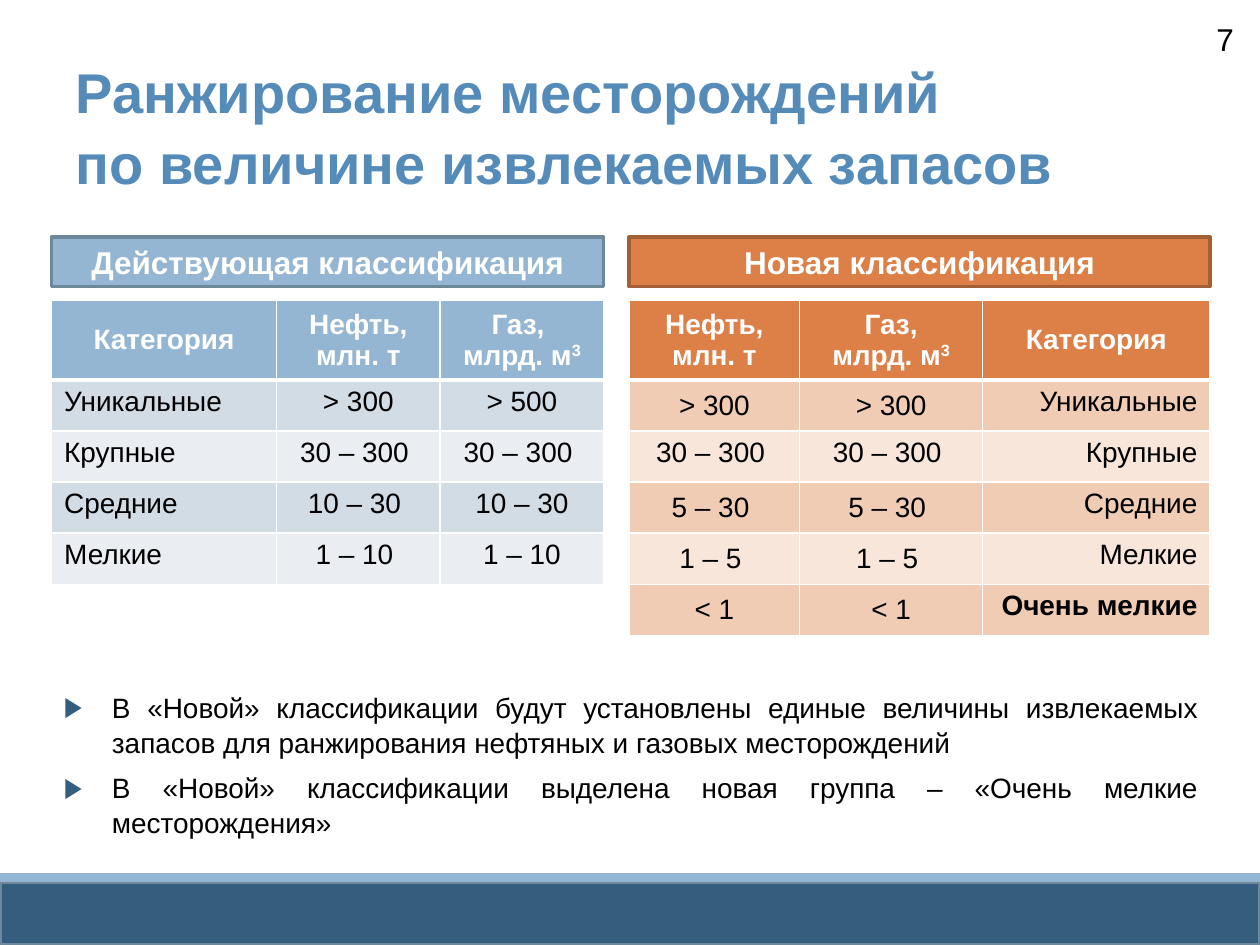
from dataclasses import dataclass

from lxml import etree
from pptx import Presentation
from pptx.dml.color import RGBColor
from pptx.enum import shapes, text
from pptx.oxml import ns
from pptx.util import Pt

LEFT, CENTER, RIGHT, JUSTIFY = (
    text.PP_ALIGN.LEFT, text.PP_ALIGN.CENTER, text.PP_ALIGN.RIGHT, text.PP_ALIGN.JUSTIFY)
TOP, MIDDLE = text.MSO_ANCHOR.TOP, text.MSO_ANCHOR.MIDDLE


@dataclass(frozen=True)
class Palette:
    head: str
    edge: str
    bands: tuple


@dataclass(frozen=True)
class Theme:
    font: str = "Arial"
    title_size: int = 32
    label_size: int = 18
    body_size: int = 16
    title: str = "558BB8"
    ink: str = "000000"
    white: str = "FFFFFF"
    navy: str = "355D7E"
    blue: Palette = Palette("94B6D2", "6D879B", ("D2DCE5", "EAEEF3"))
    orange: Palette = Palette("DD8047", "A35F35", ("F1CCB5", "F8E6DA"))


THEME = Theme()


def rgb(code):
    return RGBColor.from_string(code)


def box_pt(box):
    return [Pt(length) for length in box]


def style(paragraph, size, color, bold=False, align=LEFT):
    paragraph.alignment = align
    for run in paragraph.runs:
        run.font.name, run.font.size, run.font.bold = THEME.font, Pt(size), bold
        run.font.color.rgb = rgb(color)


def add_bar(slide, box, fill, edge=None):
    bar = slide.shapes.add_shape(shapes.MSO_SHAPE.RECTANGLE, *box_pt(box))
    bar.shadow.inherit = False
    bar.fill.solid()
    bar.fill.fore_color.rgb = rgb(fill)
    if edge:
        bar.line.color.rgb = rgb(edge)
        bar.line.width = Pt(2)
    else:
        bar.line.fill.background()
    return bar


def add_footer(slide, box):
    left, top, width, height = box
    stripe = 5
    add_bar(slide, (left, top + stripe, width, height - stripe), THEME.navy, THEME.blue.edge)
    add_bar(slide, (left, top, width, stripe), THEME.blue.head)


def add_page_number(slide, box, number):
    frame = slide.shapes.add_textbox(*box_pt(box)).text_frame
    frame.word_wrap = True
    frame.text = number
    style(frame.paragraphs[0], THEME.label_size, THEME.ink, align=RIGHT)


def set_title(slide, box, words):
    title = slide.shapes.title
    title.left, title.top, title.width, title.height = box_pt(box)
    frame = title.text_frame
    frame.text = words
    frame.auto_size = text.MSO_AUTO_SIZE.NONE
    frame.vertical_anchor = TOP
    frame.paragraphs[0].line_spacing = 1.05
    style(frame.paragraphs[0], THEME.title_size, THEME.title, True)


def add_borders(cell, bottom=1, top=1):
    properties = cell._tc.get_or_add_tcPr()
    for side, width in (("L", 1), ("R", 1), ("T", top), ("B", bottom)):
        line = etree.SubElement(properties, ns.qn(f"a:ln{side}"), w=str(Pt(width)))
        fill = etree.SubElement(line, ns.qn("a:solidFill"))
        etree.SubElement(fill, ns.qn("a:srgbClr"), val=THEME.white)


def fill_cell(cell, words, fill, color, bold, align, anchor):
    cell.text = words
    cell.vertical_anchor = anchor
    cell.fill.solid()
    cell.fill.fore_color.rgb = rgb(fill)
    for paragraph in cell.text_frame.paragraphs:
        # A trailing cube sign becomes a raised digit
        if paragraph.text.endswith("м3"):
            paragraph.text = paragraph.text[:-1]
            power = paragraph.add_run()
            power.text = "3"
            power.font._element.set("baseline", "30000")
        style(paragraph, THEME.body_size, color, bold, align)


def add_classification(slide, box, label, columns, rows, palette, category,
                       category_align, middle_rows=(), bold_rows=()):
    left, top, width, label_height = box
    head_height, row_height, gap = 45.4, 29.2, 7.8

    # Ranking table: header row, then banded rows
    table_top = top + label_height + gap
    table_height = head_height + row_height * (len(rows) - 1)
    table = slide.shapes.add_table(
        len(rows), len(columns), *box_pt((left, table_top, width, table_height))).table
    table.horz_banding = False
    for column, column_width in zip(table.columns, columns):
        column.width = Pt(column_width)
    for r, values in enumerate(rows):
        table.rows[r].height = Pt(row_height if r else head_height)
        for c, words in enumerate(values):
            cell = table.cell(r, c)
            add_borders(cell, bottom=1 if r else 3, top=3 if r == 1 else 1)
            if r == 0:
                fill_cell(cell, words, palette.head, THEME.white, True, CENTER, MIDDLE)
                continue
            is_category = c == category
            fill_cell(cell, words, palette.bands[(r - 1) % 2], THEME.ink,
                      is_category and r in bold_rows,
                      category_align if is_category else CENTER,
                      MIDDLE if r in middle_rows and not is_category else TOP)

    # Label above the table
    heading = add_bar(slide, box, palette.head, palette.edge)
    heading.text_frame.text = label
    heading.text_frame.vertical_anchor = MIDDLE
    style(heading.text_frame.paragraphs[0], THEME.label_size, THEME.white, True, CENTER)


def add_conclusions(slide, box, conclusions):
    frame = slide.shapes.add_textbox(*box_pt(box)).text_frame
    frame.word_wrap = True
    frame.text = "\n".join(conclusions)
    indent = Pt(27.4)
    for paragraph in frame.paragraphs:
        style(paragraph, THEME.body_size, THEME.ink, align=JUSTIFY)
        paragraph.space_before = Pt(6)
        paragraph.line_spacing = 1.04
        properties = paragraph._p.get_or_add_pPr()
        properties.set("marL", str(indent))
        properties.set("indent", str(-indent))
        color = etree.SubElement(properties, ns.qn("a:buClr"))
        etree.SubElement(color, ns.qn("a:srgbClr"), val=THEME.navy)
        etree.SubElement(properties, ns.qn("a:buFont"), typeface=THEME.font)
        etree.SubElement(properties, ns.qn("a:buChar"), char="▶")


def main():
    deck = Presentation()
    deck.slide_width, deck.slide_height = Pt(720), Pt(540)
    slide = deck.slides.add_slide(deck.slide_layouts[5])

    add_footer(slide, (0, 499, 720, 41))
    add_page_number(slide, (634.3, 7.9, 77.8, 28.8), "7")
    set_title(slide, (36, 27.4, 648, 38.9),
              "Ранжирование месторождений \vпо величине извлекаемых запасов")

    add_classification(
        slide, (29.5, 135.5, 315.5, 28.2), "Действующая классификация",
        (128.5, 93.5, 93.5),
        [("Категория", "Нефть, млн. т", "Газ, \nмлрд. м3"),
         ("Уникальные", "> 300", "> 500"),
         ("Крупные", "30 – 300 ", "30 – 300 "),
         ("Средние", "10 – 30 ", "10 – 30"),
         ("Мелкие", "1 – 10 ", "1 – 10")],
        THEME.blue, category=0, category_align=LEFT)
    add_classification(
        slide, (359.5, 135.5, 332, 28.2), "Новая классификация",
        (97.5, 104.5, 130),
        [("Нефть, млн. т", "Газ,\nмлрд. м3", "Категория"),
         ("> 300", "> 300", "Уникальные"),
         ("30 – 300 ", "30 – 300 ", "Крупные"),
         ("5 – 30 ", "5 – 30 ", "Средние"),
         ("1 – 5 ", "1 – 5 ", "Мелкие"),
         ("< 1", "< 1", "Очень мелкие")],
        THEME.orange, category=2, category_align=RIGHT,
        middle_rows=(1, 3, 4, 5), bold_rows=(5,))

    add_conclusions(slide, (29.5, 390.2, 662.4, 90.7), [
        "В «Новой» классификации будут установлены единые величины извлекаемых запасов "
        "для ранжирования нефтяных и газовых месторождений",
        "В «Новой» классификации выделена новая группа – «Очень мелкие месторождения»"])

    deck.save("out.pptx")


if __name__ == "__main__":
    main()
